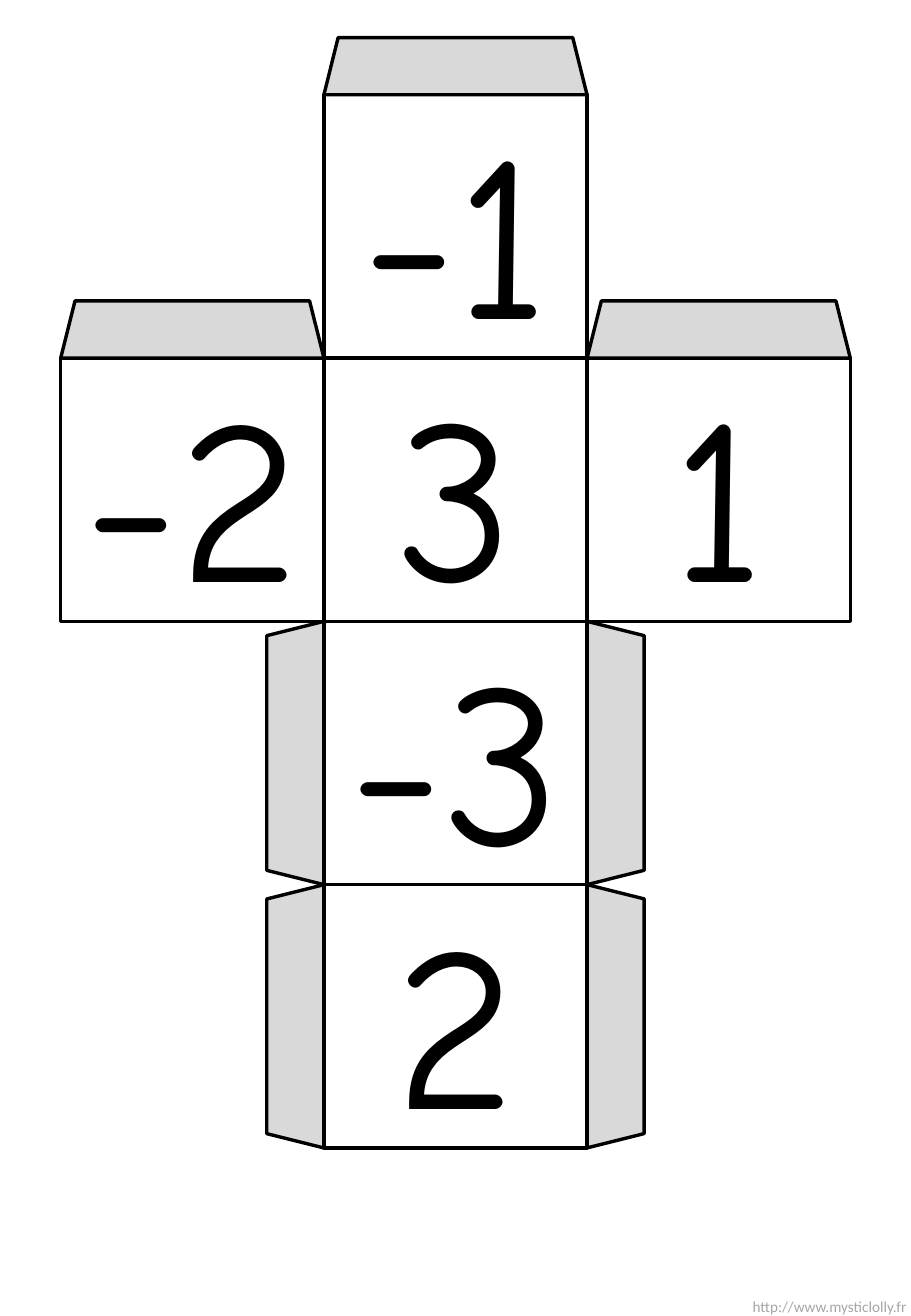
from pptx import Presentation
from pptx import util as u
from pptx.dml import color
from pptx.enum import shapes, text

COLORS = {"face": "FFFFFF", "flap": "D9D9D9", "ink": "000000", "footer": "A6A6A6"}

presentation = Presentation()
presentation.slide_width = u.Inches(7.5)
presentation.slide_height = u.Inches(10.83)
slide = presentation.slides.add_slide(presentation.slide_layouts[6])

# Grid of the cube net: three columns between the side margins
margin = u.Inches(0.5)
top = u.Inches(0.78)
edge = (presentation.slide_width - 2 * margin) / 3
flap_depth = u.Inches(0.47)


def add_panel(kind, center_x, center_y, height, fill):
    shape = slide.shapes.add_shape(
        kind, int(center_x - edge / 2), int(center_y - height / 2), int(edge), int(height))
    shape.shadow.inherit = False
    shape.fill.solid()
    shape.fill.fore_color.rgb = color.RGBColor.from_string(COLORS[fill])
    shape.line.color.rgb = color.RGBColor.from_string(COLORS["ink"])
    shape.line.width = u.Pt(2)
    return shape


def add_run(paragraph, words, font_name, size, ink):
    run = paragraph.add_run()
    run.text = words
    run.font.name = font_name
    run.font.size = u.Pt(size)
    run.font.color.rgb = color.RGBColor.from_string(COLORS[ink])


# Numbered faces: column, row, number
faces = [(1, 0, "-1"), (1, 1, "3"), (0, 1, "-2"), (2, 1, "1"), (1, 2, "-3"), (1, 3, "2")]
for column, row, number in faces:
    face = add_panel(shapes.MSO_SHAPE.RECTANGLE, margin + (column + 0.5) * edge,
                     top + (row + 0.5) * edge, edge, "face")
    face.text_frame.vertical_anchor = text.MSO_ANCHOR.MIDDLE
    paragraph = face.text_frame.paragraphs[0]
    paragraph.alignment = text.PP_ALIGN.CENTER
    add_run(paragraph, number, "Comic Neue", 138, "ink")

# Glue flaps: column and row of the face, direction outwards, rotation
flaps = [(1, 0, 0, -1, 0), (0, 1, 0, -1, 0), (2, 1, 0, -1, 0),
         (1, 2, -1, 0, 270), (1, 3, -1, 0, 270), (1, 2, 1, 0, 90), (1, 3, 1, 0, 90)]
reach = (edge + flap_depth) / 2
for column, row, step_x, step_y, rotation in flaps:
    flap = add_panel(shapes.MSO_SHAPE.TRAPEZOID,
                     margin + (column + 0.5) * edge + step_x * reach,
                     top + (row + 0.5) * edge + step_y * reach, flap_depth, "flap")
    flap.rotation = rotation

# Web address in the bottom right corner
footer = slide.shapes.add_textbox(u.Inches(5.99), u.Inches(10.63), u.Inches(1.57), u.Inches(0.25))
footer.text_frame.word_wrap = True
paragraph = footer.text_frame.paragraphs[0]
paragraph.alignment = text.PP_ALIGN.RIGHT
add_run(paragraph, "http://www.mysticlolly.fr", "Calibri", 9, "footer")

presentation.save("out.pptx")
